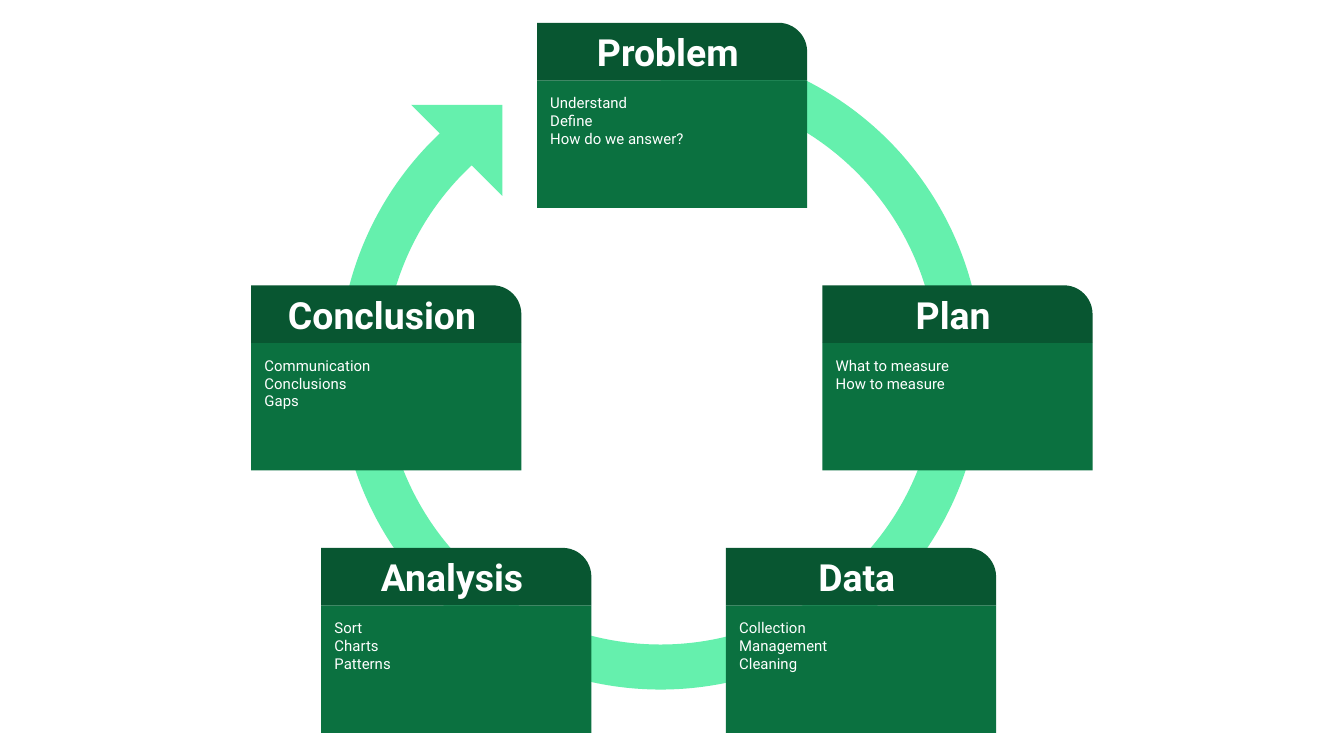
from pptx import Presentation
from pptx.dml.color import RGBColor
from pptx.enum.shapes import MSO_SHAPE
from pptx.enum.text import MSO_ANCHOR, PP_ALIGN
from pptx.util import Pt

FONT = "Roboto"
WHITE, MINT, GREEN, DARK_GREEN = "FFFFFF", "65F0AD", "0B7140", "085631"

CARD_WIDTH, CARD_HEIGHT, HEADER_HEIGHT = 144.7, 99.2, 30.8
FIRST_ROW, ROW_STEP = 12.2, 140.65

# Title, left edge, row and lines of each stage, clockwise from the top
STAGES = [
    ("Problem", 287.7, 0, ["Understand", "Define", "How do we answer?"]),
    ("Plan", 440.6, 1, ["What to measure", "How to measure"]),
    ("Data", 388.9, 2, ["Collection", "Management", "Cleaning"]),
    ("Analysis", 172.1, 2, ["Sort", "Charts", "Patterns"]),
    ("Conclusion", 134.6, 1, ["Communication", "Conclusions", "Gaps"]),
]


def color(value):
    return RGBColor.from_string(value)


def add_filled_shape(shapes, kind, box, fill):
    shape = shapes.add_shape(kind, *(Pt(length) for length in box))
    shape.shadow.inherit = False
    shape.fill.solid()
    shape.fill.fore_color.rgb = color(fill)
    shape.line.fill.background()
    return shape


def write_lines(shape, lines, size, bold, alignment, anchor):
    frame = shape.text_frame
    frame_format = {"word_wrap": True, "vertical_anchor": anchor}
    for side in ("left", "top", "right", "bottom"):
        frame_format[f"margin_{side}"] = Pt(7.2)
    for name, value in frame_format.items():
        setattr(frame, name, value)
    for index, line in enumerate(lines):
        paragraph = frame.add_paragraph() if index else frame.paragraphs[0]
        paragraph.alignment = alignment
        run = paragraph.add_run()
        run.text = line
        for name, value in {"name": FONT, "size": Pt(size), "bold": bold}.items():
            setattr(run.font, name, value)
        run.font.color.rgb = color(WHITE)


def add_cycle_arrow(slide, left, top, size):
    """Draw the ring, open at the upper left, and its arrowhead."""
    shapes = slide.shapes.add_group_shape().shapes
    ring = add_filled_shape(shapes, MSO_SHAPE.BLOCK_ARC, (left, top, size, size), MINT)
    for index, value in enumerate((54, 30.13, 0.07)):
        ring.adjustments[index] = value
    head_box = (left + 38.9, top + 31.7, 48.8, 48.8)
    head = add_filled_shape(shapes, MSO_SHAPE.RIGHT_TRIANGLE, head_box, MINT)
    for shape in (ring, head):
        shape.rotation = 180


def add_stage_card(slide, left, top, width, height, title, lines):
    shapes = slide.shapes.add_group_shape().shapes
    body_box = (left, top + HEADER_HEIGHT, width, height - HEADER_HEIGHT)
    body = add_filled_shape(shapes, MSO_SHAPE.RECTANGLE, body_box, GREEN)
    write_lines(body, lines, 8, False, PP_ALIGN.LEFT, MSO_ANCHOR.TOP)
    header_box = (left, top, width, HEADER_HEIGHT)
    header = add_filled_shape(shapes, MSO_SHAPE.ROUND_1_RECTANGLE, header_box, DARK_GREEN)
    header.adjustments[0] = 0.5
    write_lines(header, [title], 20, True, PP_ALIGN.CENTER, MSO_ANCHOR.MIDDLE)


def main():
    presentation = Presentation()
    presentation.slide_width, presentation.slide_height = Pt(720), Pt(405)
    slide = presentation.slides.add_slide(presentation.slide_layouts[6])
    add_cycle_arrow(slide, 181.4, 24.5, 344.9)
    for title, left, row, lines in STAGES:
        top = FIRST_ROW + row * ROW_STEP
        add_stage_card(slide, left, top, CARD_WIDTH, CARD_HEIGHT, title, lines)
    presentation.save("out.pptx")


if __name__ == "__main__":
    main()
